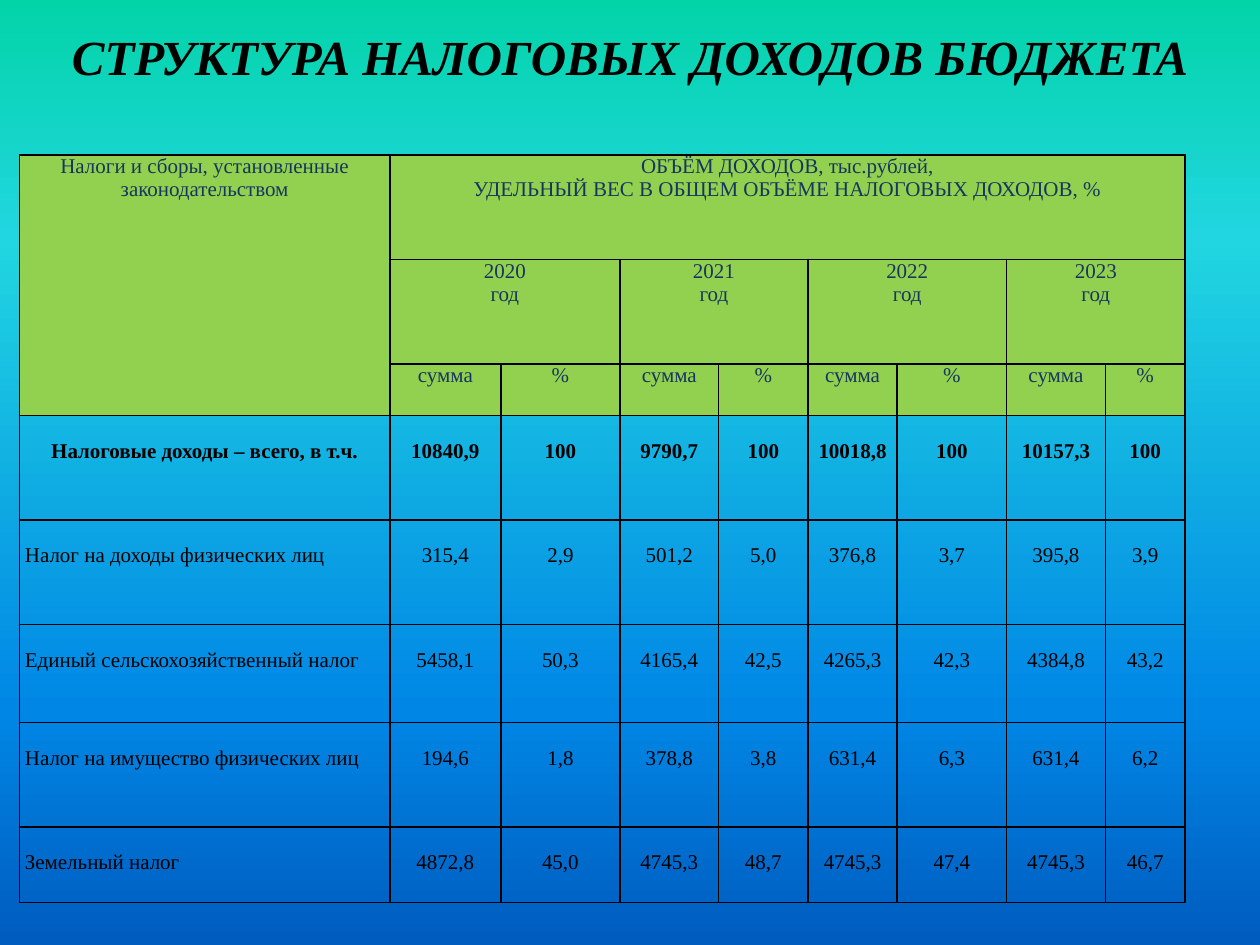
from pptx import Presentation, util as u
from pptx.dml.color import RGBColor
from pptx.enum import text
from pptx.oxml import ns
from lxml import etree

COLORS = {"header": "92D050", "heading": "17365D", "ink": "000000"}
SKY = [(0, "03D4A8"), (25, "21D6E0"), (75, "0087E6"), (100, "005CBF")]
FONT = "Times New Roman"
TITLE = "СТРУКТУРА НАЛОГОВЫХ ДОХОДОВ БЮДЖЕТА"
TAX_HEADING = "Налоги и сборы, установленные законодательством"
INCOME_HEADING = "ОБЪЁМ ДОХОДОВ, тыс.рублей,\nУДЕЛЬНЫЙ ВЕС В ОБЩЕМ ОБЪЁМЕ НАЛОГОВЫХ ДОХОДОВ, %"
YEARS = [2020, 2021, 2022, 2023]
TAXES = [
    ("Налоговые доходы – всего, в т.ч.", "10840,9 100 9790,7 100 10018,8 100 10157,3 100"),
    ("Налог на доходы физических лиц", "315,4 2,9 501,2 5,0 376,8 3,7 395,8 3,9"),
    ("Единый сельскохозяйственный налог", "5458,1 50,3 4165,4 42,5 4265,3 42,3 4384,8 43,2"),
    ("Налог на имущество физических лиц", "194,6 1,8 378,8 3,8 631,4 6,3 631,4 6,2"),
    ("Земельный налог", "4872,8 45,0 4745,3 48,7 4745,3 47,4 4745,3 46,7"),
]
HEADER_ROWS = 3
COLUMN_WIDTHS = [211.5, 63.5, 68, 56.5, 51, 51, 62.5, 56.5, 45.5]
ROW_HEIGHTS = [59.75, 59.75, 29.5, 59.75, 59.75, 56, 59.75, 43.2]


def style_text(frame, size, color, align, bold=False, italic=False):
    for paragraph in frame.paragraphs:
        paragraph.alignment = align
        font = paragraph.font
        font.name, font.size = FONT, u.Pt(size)
        font.bold, font.italic = bold, italic
        font.color.rgb = RGBColor.from_string(COLORS[color])


def paint_background(slide):
    fill = slide.background.fill
    fill.gradient()
    fill.gradient_angle = 270
    stops = slide.element.find(".//" + ns.qn("a:gsLst"))
    for stop in list(stops):
        stops.remove(stop)
    for percent, color in SKY:
        stop = etree.SubElement(stops, ns.qn("a:gs"), pos=str(percent * 1000))
        etree.SubElement(stop, ns.qn("a:srgbClr"), val=color)


def place_title(slide, left, top, width, height):
    title = slide.shapes.title
    title.left, title.top = u.Pt(left), u.Pt(top)
    title.width, title.height = u.Pt(width), u.Pt(height)
    frame = title.text_frame
    frame.text = TITLE
    frame.auto_size = text.MSO_AUTO_SIZE.SHAPE_TO_FIT_TEXT
    frame.vertical_anchor = text.MSO_ANCHOR.MIDDLE
    style_text(frame, 28, "ink", text.PP_ALIGN.CENTER, bold=True, italic=True)


def draw_borders(cell):
    properties = cell._tc.get_or_add_tcPr()
    for side in ("lnL", "lnR", "lnT", "lnB"):
        line = etree.SubElement(properties, ns.qn("a:" + side), w=str(u.Pt(1)))
        solid = etree.SubElement(line, ns.qn("a:solidFill"))
        etree.SubElement(solid, ns.qn("a:srgbClr"), val=COLORS["ink"])


def format_cell(cell, row, column):
    is_header, is_total = row < HEADER_ROWS, row == HEADER_ROWS
    draw_borders(cell)
    cell.margin_left = cell.margin_right = u.Pt(3)
    cell.margin_top = u.Pt(0 if is_header else 13.8)
    cell.margin_bottom = u.Pt(0)
    if is_header:
        cell.fill.solid()
        cell.fill.fore_color.rgb = RGBColor.from_string(COLORS["header"])
    else:
        cell.fill.background()
    is_tax_name = column == 0 and row > HEADER_ROWS
    align = text.PP_ALIGN.LEFT if is_tax_name else text.PP_ALIGN.CENTER
    style_text(cell.text_frame, 12, "heading" if is_header else "ink", align, bold=is_total)


def place_tax_table(slide, left, top):
    frame = slide.shapes.add_table(
        len(ROW_HEIGHTS), len(COLUMN_WIDTHS), u.Pt(left), u.Pt(top),
        u.Pt(sum(COLUMN_WIDTHS)), u.Pt(sum(ROW_HEIGHTS)))
    table = frame.table
    table.first_row = table.horz_banding = False
    for column, width in zip(table.columns, COLUMN_WIDTHS):
        column.width = u.Pt(width)
    for row, height in zip(table.rows, ROW_HEIGHTS):
        row.height = u.Pt(height)

    table.cell(0, 0).merge(table.cell(HEADER_ROWS - 1, 0))
    table.cell(0, 0).text = TAX_HEADING
    table.cell(0, 1).merge(table.cell(0, len(COLUMN_WIDTHS) - 1))
    table.cell(0, 1).text = INCOME_HEADING
    for index, year in enumerate(YEARS):
        column = 1 + 2 * index
        table.cell(1, column).merge(table.cell(1, column + 1))
        table.cell(1, column).text = f"{year}\nгод"
        table.cell(2, column).text = "сумма"
        table.cell(2, column + 1).text = "%"
    for row, (tax, figures) in enumerate(TAXES, HEADER_ROWS):
        for column, value in enumerate([tax, *figures.split()]):
            table.cell(row, column).text = value

    for row in range(len(ROW_HEIGHTS)):
        for column in range(len(COLUMN_WIDTHS)):
            format_cell(table.cell(row, column), row, column)


def main():
    deck = Presentation()
    deck.slide_width, deck.slide_height = u.Pt(720), u.Pt(540)
    slide = deck.slides.add_slide(deck.slide_layouts[5])
    paint_background(slide)
    place_tax_table(slide, 11.25, 88.5)
    place_title(slide, 0, 11.5, 720, 41)
    deck.save("out.pptx")


if __name__ == "__main__":
    main()
